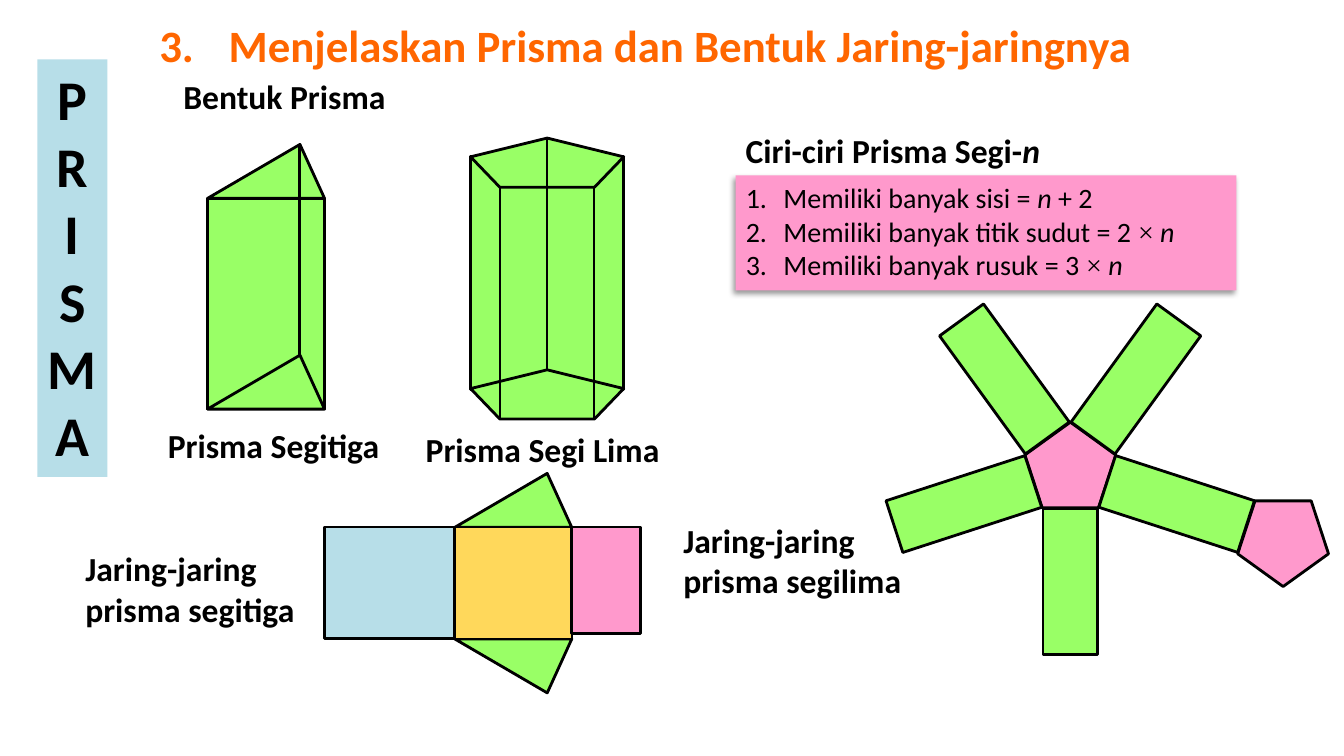
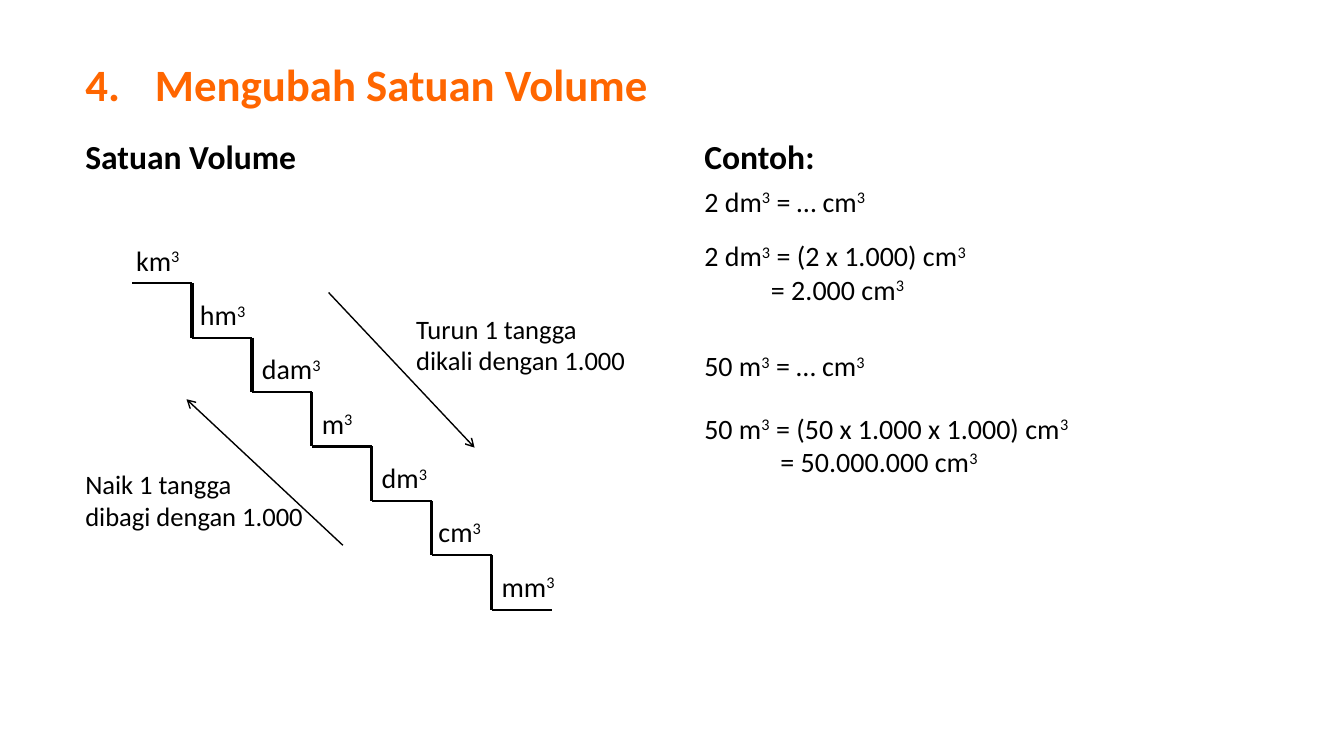
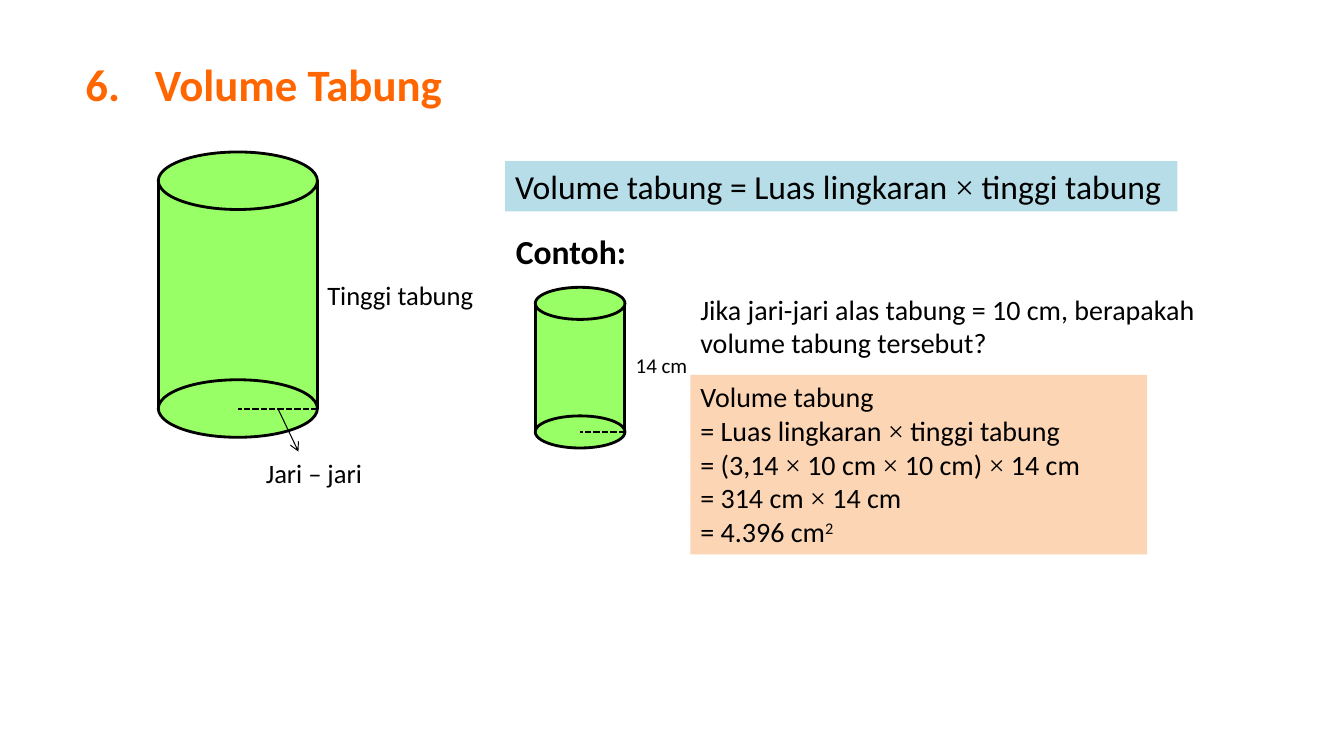
"""Build three lesson slides on prisms, volume units and the volume of a cylinder."""
from math import cos, radians, sin

from lxml import etree
from pptx import Presentation
from pptx import util as u
from pptx.dml.color import RGBColor
from pptx.enum import dml, shapes, text
from pptx.oxml import ns

BLACK = RGBColor(0x00, 0x00, 0x00)
ORANGE = RGBColor(0xFF, 0x66, 0x00)
GREEN = RGBColor(0x99, 0xFF, 0x66)
BLUE = RGBColor(0xB7, 0xDE, 0xE8)
PINK = RGBColor(0xFF, 0x99, 0xCC)
YELLOW = RGBColor(0xFF, 0xD8, 0x5B)
PEACH = RGBColor(0xFC, 0xD5, 0xB5)
BODY_FONT = "Calibri"
SIGN_FONT = "Times New Roman"
KIND = shapes.MSO_SHAPE
LEFT = text.PP_ALIGN.LEFT
CENTER = text.PP_ALIGN.CENTER


def write(text_frame, lines, size, bold=False, align=LEFT, colour=BLACK, indent=0):
    """Fill a frame; "|" parts runs, "^" raises a run and "_" slants it."""
    text_frame.word_wrap = True
    text_frame.auto_size = text.MSO_AUTO_SIZE.NONE
    text_frame.vertical_anchor = text.MSO_ANCHOR.TOP
    text_frame.text = "\n".join(lines)
    for number, paragraph in enumerate(text_frame.paragraphs):
        paragraph.alignment = align
        paragraph.space_before = u.Pt(0)
        if indent and number:
            paragraph._p.get_or_add_pPr().set("marL", str(u.Cm(indent)))
        pieces = lines[number].replace("×", "|×|").split("|")
        paragraph.clear()
        for piece in filter(None, pieces):
            run = paragraph.add_run()
            run.text = piece.lstrip("^_")
            run.font.name = SIGN_FONT if piece == "×" else BODY_FONT
            run.font.size = u.Pt(size)
            run.font.bold = bold
            run.font.color.rgb = colour
            if piece.startswith("_"):
                run.font.italic = True
            if piece.startswith("^"):
                run._r.get_or_add_rPr().set("baseline", "30000")


def draw(slide, kind, left, top, width, height, fill, weight=2):
    """Add a filled shape, measured in centimetres, outlined unless weight is 0."""
    shape = slide.shapes.add_shape(kind, u.Cm(left), u.Cm(top), u.Cm(width), u.Cm(height))
    shape.shadow.inherit = False
    shape.fill.solid()
    shape.fill.fore_color.rgb = fill
    if weight:
        shape.line.color.rgb = BLACK
        shape.line.width = u.Pt(weight)
    else:
        shape.line.fill.background()
    return shape


presentation = Presentation()
presentation.slide_width = u.Cm(33.87)
presentation.slide_height = u.Cm(19.05)

TITLES = [
    (1, 3.76, 0.33, "3.\tMenjelaskan Prisma dan Bentuk Jaring-jaringnya"),
    (5, 1.9, 1.3, "4.\tMengubah Satuan Volume"),
    (5, 1.9, 1.3, "6.\tVolume Tabung"),
]
for layout, left, top, heading in TITLES:
    slide = presentation.slides.add_slide(presentation.slide_layouts[layout])
    title = slide.shapes.title
    title.left, title.top = u.Cm(left), u.Cm(top)
    title.width, title.height = u.Cm(27.5), u.Cm(1.63)
    write(title.text_frame, [heading], 32, True, colour=ORANGE)
    properties = title.text_frame.paragraphs[0]._p.get_or_add_pPr()
    tabs = etree.SubElement(properties, ns.qn("a:tabLst"))
    etree.SubElement(tabs, ns.qn("a:tab"), pos=str(u.Cm(1.75)), algn="l")
prism, units, cylinder = presentation.slides

banner = draw(prism, KIND.RECTANGLE, 0.94, 1.5, 1.77, 10.52, BLUE, 0)
write(banner.text_frame, list("PRISMA"), 40, True, CENTER)

draw(prism, KIND.RECTANGLE, 5.23, 5, 2.95, 5.31, GREEN)
for top in (3.64, 8.95):
    triangle = draw(prism, KIND.ISOSCELES_TRIANGLE, 5.23, top, 2.95, 1.36, GREEN)
    triangle.adjustments[0] = 0.79

draw(prism, KIND.RECTANGLE, 11.86, 3.94, 3.86, 5.87, GREEN)
for top in (3.48, 9.32):
    draw(prism, KIND.REGULAR_PENTAGON, 11.86, top, 3.86, 1.24, GREEN)

for top, apex, turn in ((11.93, 0.79, 0), (16.1, 0.21, 180)):
    triangle = draw(prism, KIND.ISOSCELES_TRIANGLE, 11.46, top, 2.95, 1.36, GREEN)
    triangle.adjustments[0] = apex
    triangle.rotation = turn
draw(prism, KIND.RECTANGLE, 11.46, 13.28, 2.95, 2.82, YELLOW, 1.5)
draw(prism, KIND.RECTANGLE, 8.18, 13.28, 3.28, 2.82, BLUE)
draw(prism, KIND.RECTANGLE, 14.41, 13.28, 1.73, 2.69, PINK)

for left, top, turn in ((25.83, 10.64, 0), (31.19, 12.62, 180)):
    pentagon = draw(prism, KIND.REGULAR_PENTAGON, left, top, 2.29, 2.16, PINK)
    pentagon.rotation = turn
strip_length, strip_width, radius = 3.68, 1.37, 2.82
for angle in range(90, 450, 72):
    left = 26.97 + radius * cos(radians(angle)) - strip_length / 2
    top = 11.83 + radius * sin(radians(angle)) - strip_width / 2
    strip = draw(prism, KIND.RECTANGLE, left, top, strip_length, strip_width, GREEN)
    strip.rotation = angle

features = prism.placeholders[1]
features.left, features.top = u.Cm(18.54), u.Cm(4.42)
features.width, features.height = u.Cm(12.62), u.Cm(2.9)
features.fill.solid()
features.fill.fore_color.rgb = PINK
write(features.text_frame, [
    "Memiliki banyak sisi = |_n| + 2",
    "Memiliki banyak titik sudut = 2 ×| |_n",
    "Memiliki banyak rusuk = 3 ×| |_n",
], 20)
for paragraph in features.text_frame.paragraphs:
    properties = paragraph._p.get_or_add_pPr()
    properties.set("marL", str(u.Cm(0.95)))
    properties.set("indent", str(u.Cm(-0.95)))
    etree.SubElement(properties, ns.qn("a:buFont"), typeface="+mj-lt")
    etree.SubElement(properties, ns.qn("a:buAutoNum"), type="arabicPeriod")
effects = etree.SubElement(features._element.spPr, ns.qn("a:effectLst"))
shadow = etree.SubElement(effects, ns.qn("a:outerShdw"), blurRad=str(u.Pt(4)),
                          dist=str(u.Pt(3)), dir="8100000", rotWithShape="0")
shade = etree.SubElement(shadow, ns.qn("a:srgbClr"), val=str(BLACK))
etree.SubElement(shade, ns.qn("a:alpha"), val="40000")

lines = [
    (prism, 7.55, 3.64, 7.55, 8.95, 2.25, ""),
    (prism, 12.6, 4.72, 12.6, 10.56, 1.5, ""),
    (prism, 14.96, 4.72, 14.96, 10.56, 1.5, ""),
    (prism, 13.79, 3.48, 13.79, 9.32, 1.5, ""),
    (units, 8.28, 7.37, 11.96, 11.28, 1, "arrow"),
    (units, 8.64, 13.74, 4.7, 10.06, 1, "arrow"),
    (cylinder, 7, 10.29, 7.52, 11.38, 0.75, "arrow"),
]
labels = [
    (prism, 4.37, 1.78, 6, 24, True, LEFT, 0, ["Bentuk Prisma"]),
    (prism, 3.76, 10.57, 6.27, 24, True, CENTER, 0, ["Prisma Segitiga"]),
    (prism, 10.41, 10.69, 6.53, 24, True, CENTER, 0, ["Prisma Segi Lima"]),
    (prism, 18.54, 3.15, 9, 24, True, LEFT, 0, ["Ciri-ciri Prisma Segi-|_n"]),
    (prism, 1.9, 13.69, 6.27, 24, True, LEFT, 0, ["Jaring-jaring prisma segitiga"]),
    (prism, 16.97, 12.98, 6.27, 24, True, LEFT, 0, ["Jaring-jaring prisma segilima"]),
    (units, 1.9, 3.3, 7, 24, True, LEFT, 0, ["Satuan Volume"]),
    (units, 10.24, 7.75, 6.5, 19, False, LEFT, 0, ["Turun 1 tangga", "dikali dengan 1.000"]),
    (units, 1.9, 11.66, 6.5, 19, False, LEFT, 0, ["Naik 1 tangga", "dibagi dengan 1.000"]),
    (units, 17.5, 3.3, 5, 24, True, LEFT, 0, ["Contoh:"]),
    (units, 17.5, 4.52, 8, 20, False, LEFT, 0, ["2 dm|^3| = … cm|^3"]),
    (units, 17.5, 5.89, 10, 20, False, LEFT, 1.68,
     ["2 dm|^3| = (2 x 1.000) cm|^3", "= 2.000 cm|^3"]),
    (units, 17.5, 8.66, 8, 20, False, LEFT, 0, ["50 m|^3| = … cm|^3"]),
    (units, 17.5, 10.24, 12, 20, False, LEFT, 1.92,
     ["50 m|^3| = (50 x 1.000 x 1.000) cm|^3", "= 50.000.000 cm|^3"]),
    (cylinder, 8, 6.91, 4.5, 19, False, LEFT, 0, ["Tinggi tabung"]),
    (cylinder, 6.45, 11.38, 3.5, 19, False, LEFT, 0, ["Jari – jari"]),
    (cylinder, 12.75, 5.69, 5, 24, True, LEFT, 0, ["Contoh:"]),
    (cylinder, 15.77, 8.76, 2.1, 15, False, LEFT, 0, ["14 cm"]),
    (cylinder, 17.4, 7.24, 14.66, 20, False, LEFT, 0,
     ["Jika jari-jari alas tabung = 10 cm, berapakah volume tabung tersebut?"]),
]

tread, riser = 1.51, 1.37
stairs = [("km", -0.15), ("hm", -0.05), ("dam", 0), ("m", 0), ("dm", 0), ("cm", -0.08), ("mm", 0)]
for step, (unit, shift) in enumerate(stairs):
    left, top = 3.33 + step * tread, 7.14 + step * riser
    right = left + tread
    lines.append((units, left, top, right, top, 1.5, ""))
    if step < len(stairs) - 1:
        lines.append((units, right, top, right, top + riser, 2.25, ""))
    labels.append((units, left + shift, top - 1.14, 2.3, 20, False, LEFT, 0, [unit + "|^3"]))

for left, top, width, rim, height in ((3.99, 3.83, 4.01, 1.45, 5.74), (13.49, 7.24, 2.26, 0.81, 3.24)):
    base = top + rim / 2 + height
    draw(cylinder, KIND.RECTANGLE, left, top + rim / 2, width, height, GREEN)
    for rim_top in (top, top + height):
        draw(cylinder, KIND.OVAL, left, rim_top, width, rim, GREEN)
    lines.append((cylinder, left + width, base, left + width / 2, base, 1.5, "dash"))

formula = draw(cylinder, KIND.RECTANGLE, 12.73, 4.06, 16.94, 1.27, BLUE, 0)
write(formula.text_frame, ["Volume tabung = Luas lingkaran × tinggi tabung"], 24)
solution = draw(cylinder, KIND.RECTANGLE, 17.4, 9.45, 11.51, 4.52, PEACH, 0)
write(solution.text_frame, [
    "Volume tabung",
    "= Luas lingkaran × tinggi tabung",
    "= (3,14 × 10 cm × 10 cm) × 14 cm",
    "= 314 cm × 14 cm",
    "= 4.396 cm|^2",
], 20)

for slide, left, top, right, bottom, weight, style in lines:
    connector = slide.shapes.add_connector(
        shapes.MSO_CONNECTOR.STRAIGHT, u.Cm(left), u.Cm(top), u.Cm(right), u.Cm(bottom))
    connector.line.color.rgb = BLACK
    connector.line.width = u.Pt(weight)
    if style == "dash":
        connector.line.dash_style = dml.MSO_LINE.SQUARE_DOT
    if style == "arrow":
        etree.SubElement(connector.line._get_or_add_ln(), ns.qn("a:tailEnd"), type="arrow")
    etree.SubElement(connector._element.spPr, ns.qn("a:effectLst"))

for slide, left, top, width, size, bold, align, indent, wording in labels:
    height = 0.25 + 0.045 * size * len(wording)
    label = slide.shapes.add_textbox(u.Cm(left), u.Cm(top), u.Cm(width), u.Cm(height))
    write(label.text_frame, wording, size, bold, align, indent=indent)

presentation.save("out.pptx")
